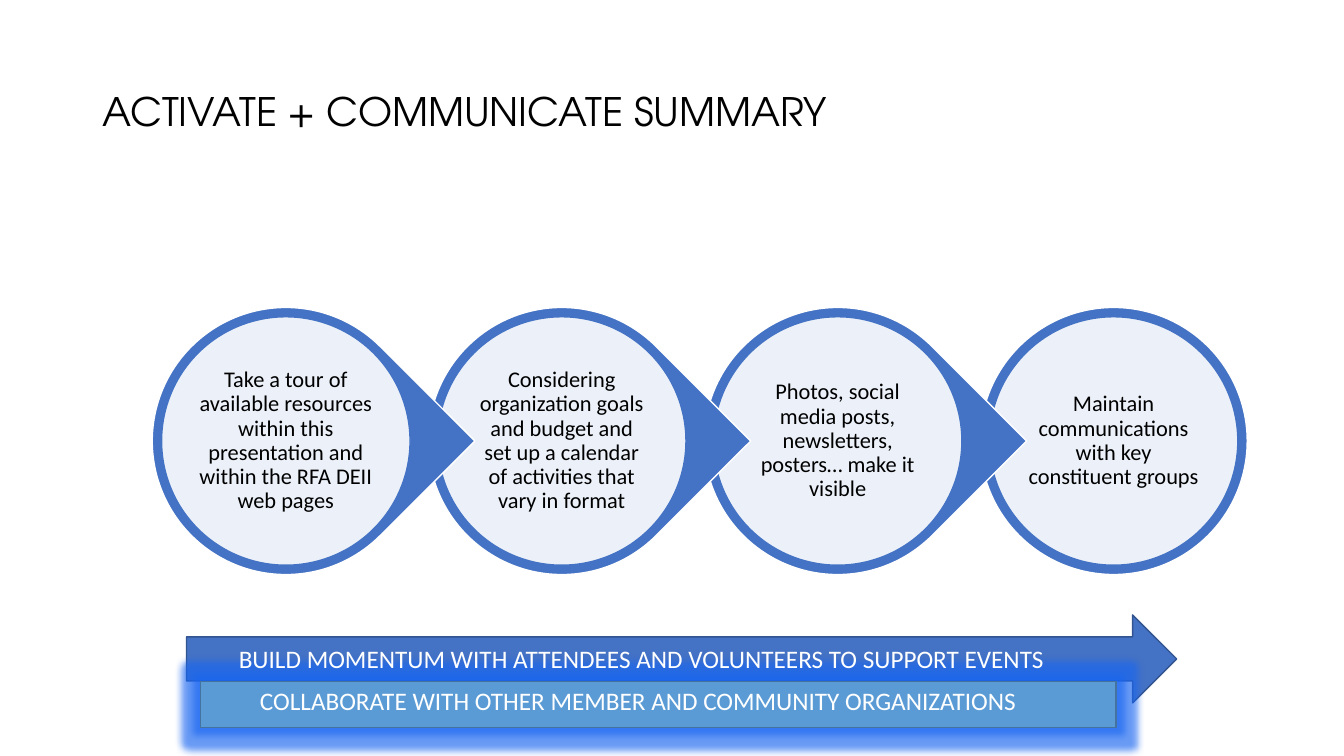
from lxml import etree
from pptx import Presentation
from pptx.dml.color import RGBColor
from pptx.enum.shapes import MSO_SHAPE
from pptx.enum.text import MSO_ANCHOR, PP_ALIGN
from pptx.oxml.ns import qn
from pptx.util import Inches, Pt

ELLIPSE, TEARDROP = MSO_SHAPE.OVAL, MSO_SHAPE.TEAR
ARROW, BAR = MSO_SHAPE.RIGHT_ARROW, MSO_SHAPE.RECTANGLE
MIDDLE, TOP = MSO_ANCHOR.MIDDLE, MSO_ANCHOR.TOP
LEFT, CENTER = PP_ALIGN.LEFT, PP_ALIGN.CENTER

BLUE, WHITE, BLACK = "4472C4", "FFFFFF", "000000"
BODY_FONT, TITLE_FONT = "Calibri", "TeX Gyre Adventor"

STEPS = [
    "Take a tour of available resources within this presentation and "
    "within the RFA DEII web pages",
    "Considering organization goals and budget and set up a calendar of "
    "activities that vary in format",
    "Photos, social media posts, newsletters, posters… make it visible",
    "Maintain communications with key constituent groups",
]


def color(hex_value):
    return RGBColor.from_string(hex_value)


def add_figure(page, kind, box, fill, line):
    figure = page.shapes.add_shape(kind, *map(Inches, box))
    figure.shadow.inherit = False
    figure.fill.solid()
    figure.fill.fore_color.rgb = color(fill)
    figure.line.color.rgb = color(line)
    figure.line.width = Pt(1)
    return figure


def add_text(page, box, text, size, font=BODY_FONT, ink=BLACK, anchor=MIDDLE,
             inset=(0.1, 0.05), **paragraph_format):
    frame = page.shapes.add_textbox(*map(Inches, box)).text_frame
    across, down = map(Inches, inset)
    frame_format = {
        "word_wrap": True, "vertical_anchor": anchor,
        "margin_left": across, "margin_right": across,
        "margin_top": down, "margin_bottom": down,
    }
    for name, value in frame_format.items():
        setattr(frame, name, value)
    para = frame.paragraphs[0]
    for name, value in paragraph_format.items():
        setattr(para, name, value)
    span = para.add_run()
    span.text = text
    for name, value in {"size": Pt(size), "name": font}.items():
        setattr(span.font, name, value)
    span.font.color.rgb = color(ink)


def add_alpha(color_element, percent):
    etree.SubElement(color_element, qn("a:alpha"), val=str(percent * 1000))


def add_glow(figure, hex_value, radius, percent):
    effects = figure._element.spPr.find(qn("a:effectLst"))
    glow = etree.SubElement(effects, qn("a:glow"), rad=str(Pt(radius)))
    add_alpha(etree.SubElement(glow, qn("a:srgbClr"), val=hex_value), percent)


def add_title(page, box):
    add_text(page, box, "ACTIVATE + COMMUNICATE SUMMARY", 28, TITLE_FONT,
             alignment=LEFT, line_spacing=0.9)


def add_step(page, box, text, is_last):
    left, top, size, _ = box

    def centered(share):
        margin = size * (1 - share) / 2
        return left + margin, top + margin, size * share, size * share

    # Outer ring, pointing at the next step
    ring = add_figure(page, ELLIPSE if is_last else TEARDROP, box, BLUE, WHITE)
    if not is_last:
        ring.adjustments[0] = 1
        ring.rotation = 45
    # Pale disc and its text
    disc = add_figure(page, ELLIPSE, centered(0.93), WHITE, BLUE)
    add_alpha(disc.fill._xPr.find(".//" + qn("a:srgbClr")), 90)
    add_text(page, centered(0.67), text, 16, inset=(0.03, 0.02),
             alignment=CENTER, line_spacing=0.9, space_after=Pt(5.6))


def add_process(page, box):
    left, top, width, size = box
    pitch = (width - size) / (len(STEPS) - 1)
    # Right to left, so each point overlaps the next circle
    for index in reversed(range(len(STEPS))):
        add_step(page, (left + index * pitch, top, size, size),
                 STEPS[index], index == len(STEPS) - 1)


def add_banners(page, box):
    left, top, width, height = box
    label = {"size": 18, "ink": WHITE, "anchor": TOP, "alignment": LEFT}
    # Arrow and glowing bar
    add_figure(page, ARROW, (left, top, width, height * 0.78), BLUE, "325491")
    bar = add_figure(page, BAR, (left + 0.14, top + 0.66, 9.08, 0.46),
                     "5B9BD5", "43739E")
    add_glow(bar, "1A66F0", 10, 65)
    # Labels, in front of the glow so both stay readable
    add_text(page, (left + 0.42, top + 0.23, 8.79, 0.4),
             "BUILD MOMENTUM WITH ATTENDEES AND VOLUNTEERS TO SUPPORT EVENTS",
             **label)
    add_text(page, (left + 0.63, top + 0.65, 9.19, 0.4),
             "COLLABORATE WITH OTHER MEMBER AND COMMUNITY ORGANIZATIONS",
             **label)


def main():
    deck = Presentation()
    deck.slide_width, deck.slide_height = Inches(13.33), Inches(7.5)
    page = deck.slides.add_slide(deck.slide_layouts[6])
    add_title(page, (0.92, 0.4, 11.5, 1.45))
    add_process(page, (1.51, 3.05, 10.86, 2.65))
    add_banners(page, (1.85, 6.1, 9.82, 1.12))
    deck.save("out.pptx")


if __name__ == "__main__":
    main()
